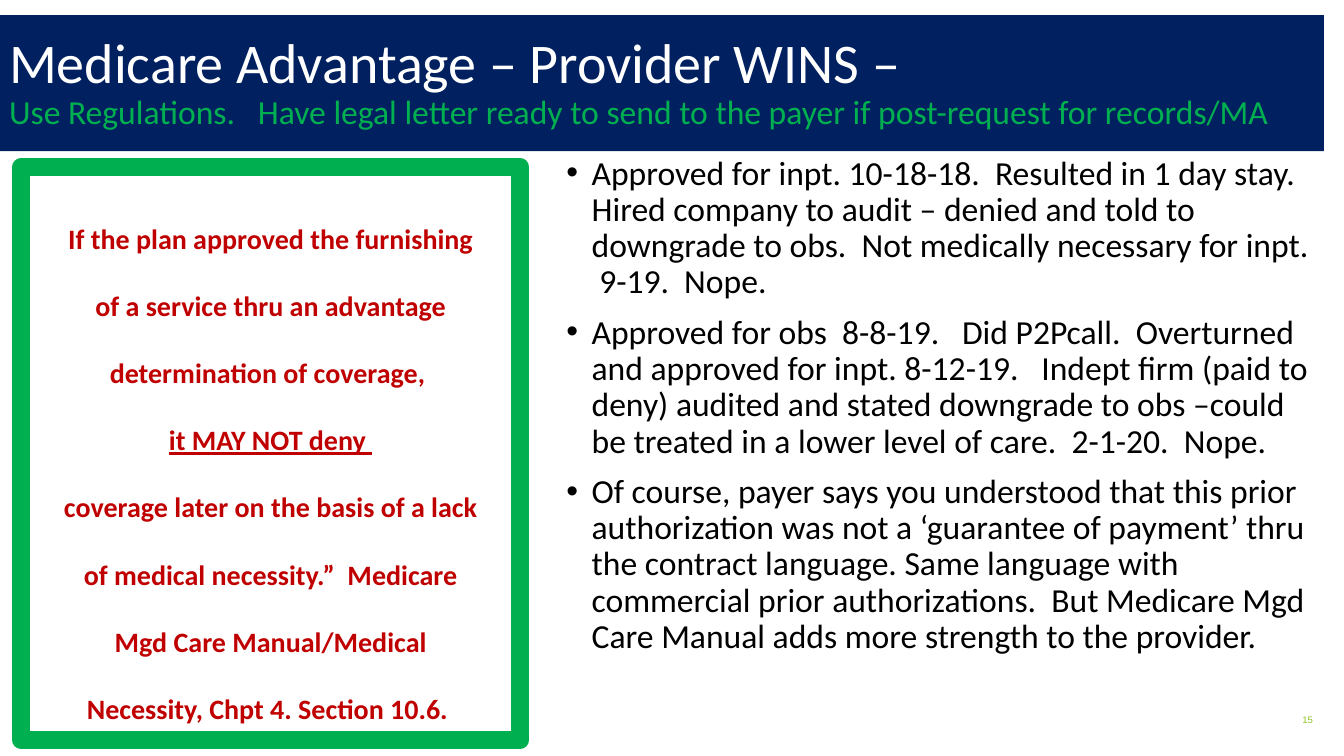
from lxml.etree import SubElement
from pptx import Presentation
from pptx.dml.color import RGBColor
from pptx.enum.shapes import MSO_SHAPE
from pptx.enum.text import MSO_ANCHOR as ANCHOR, MSO_AUTO_SIZE as AUTO, PP_ALIGN as ALIGN
from pptx.oxml.ns import qn
from pptx.util import Inches, Pt

NAVY, GREEN, RED, LIME = "002060", "00B050", "C00000", "90C226"
TITLE = ("Medicare Advantage – Provider WINS – \v"
         "Use Regulations.   Have legal letter ready to send to the payer if post-request for records/MA")
QUOTE = [
    "If the plan approved the furnishing of a service thru an advantage determination of coverage, ",
    "it MAY NOT deny ",
    "coverage later on the basis of a lack of medical necessity.”  Medicare Mgd Care "
    "Manual/Medical Necessity, Chpt 4. Section 10.6. ",
]
CASES = [
    "Approved for inpt. 10-18-18.  Resulted in 1 day stay.  Hired company to audit – denied and "
    "told to downgrade to obs.  Not medically necessary for inpt.  9-19.  Nope.",
    "Approved for obs  8-8-19.   Did P2Pcall.  Overturned and approved for inpt. 8-12-19.   Indept "
    "firm (paid to deny) audited and stated downgrade to obs –could be treated in a lower level "
    "of care.  2-1-20.  Nope.",
    "Of course, payer says you understood that this prior authorization was not a ‘guarantee of "
    "payment’ thru the contract language. Same language with commercial prior authorizations.  "
    "But Medicare Mgd Care Manual adds more strength to the provider.",
]


def rgb(color):
    """Turn a hex string into a colour."""
    return RGBColor.from_string(color)


def style(font, size, color, bold=False, name="Calibri"):
    """Format a font."""
    font.name, font.size, font.bold = name, Pt(size), bold
    font.color.rgb = rgb(color)


def add_title(slide):
    """Fill the title bar with its heading and subheading."""
    sp = slide.shapes.title
    sp.left, sp.top, sp.width, sp.height = map(Inches, (-0.01, 0.15, 13.14, 1.35))
    sp.fill.solid()
    sp.fill.fore_color.rgb = rgb(NAVY)
    tf = sp.text_frame
    tf.auto_size, tf.vertical_anchor = AUTO.NONE, ANCHOR.MIDDLE
    tf.text = TITLE
    p = tf.paragraphs[0]
    p.alignment, p.line_spacing = ALIGN.LEFT, 0.9
    for r, size, color in zip(p.runs, (40, 24), ("FFFFFF", GREEN)):
        style(r.font, size, color)


def add_frame(slide, *box):
    """Draw the thick outline around the quotation."""
    sp = slide.shapes.add_shape(MSO_SHAPE.RECTANGLE, *map(Inches, box))
    sp.shadow.inherit = False
    sp.fill.background()
    sp.line.color.rgb = rgb(GREEN)
    sp.line.width = Pt(13)


def add_text(slide, box, lines):
    """Add a wrapping text box with one paragraph per line."""
    tf = slide.shapes.add_textbox(*map(Inches, box)).text_frame
    tf.word_wrap = True
    tf.text = "\n".join(lines)
    return tf


def add_bullet(p):
    """Give a paragraph a hanging bullet."""
    pPr = p._p.get_or_add_pPr()
    pPr.set("marL", str(Inches(0.25)))
    pPr.set("indent", str(-Inches(0.25)))
    SubElement(pPr, qn("a:buFont")).set("typeface", "Arial")
    SubElement(pPr, qn("a:buChar")).set("char", "•")


def add_quote(slide):
    """Add the quotation with its middle phrase underlined."""
    tf = add_text(slide, (0.45, 1.81, 4.47, 5.39), QUOTE)
    for p in tf.paragraphs:
        p.alignment, p.line_spacing = ALIGN.CENTER, 2.0
        style(p.runs[0].font, 20, RED, bold=True)
    tf.paragraphs[1].runs[0].font.underline = True


def add_cases(slide):
    """Add the bulleted list of cases."""
    tf = add_text(slide, (5.52, 1.5, 7.6, 5.7), CASES)
    for i, p in enumerate(tf.paragraphs):
        add_bullet(p)
        p.line_spacing, p.space_before = 0.9, Pt(10 if i else 0)
        style(p.runs[0].font, 24, "000000")


def add_page_number(slide, number):
    """Add the page number at the lower right."""
    tf = add_text(slide, (10.12, 6.94, 3, 0.4), [number])
    tf.vertical_anchor = ANCHOR.MIDDLE
    p = tf.paragraphs[0]
    p.alignment = ALIGN.RIGHT
    style(p.runs[0].font, 6.8, LIME, name="Arial")


def main():
    """Build and save the slide."""
    prs = Presentation()
    prs.slide_width, prs.slide_height = Inches(13.33), Inches(7.5)
    slide = prs.slides.add_slide(prs.slide_layouts[5])
    add_title(slide)
    add_page_number(slide, "15")
    add_cases(slide)
    add_frame(slide, 0.21, 1.66, 4.95, 5.68)
    add_quote(slide)
    prs.save("out.pptx")


if __name__ == "__main__":
    main()
